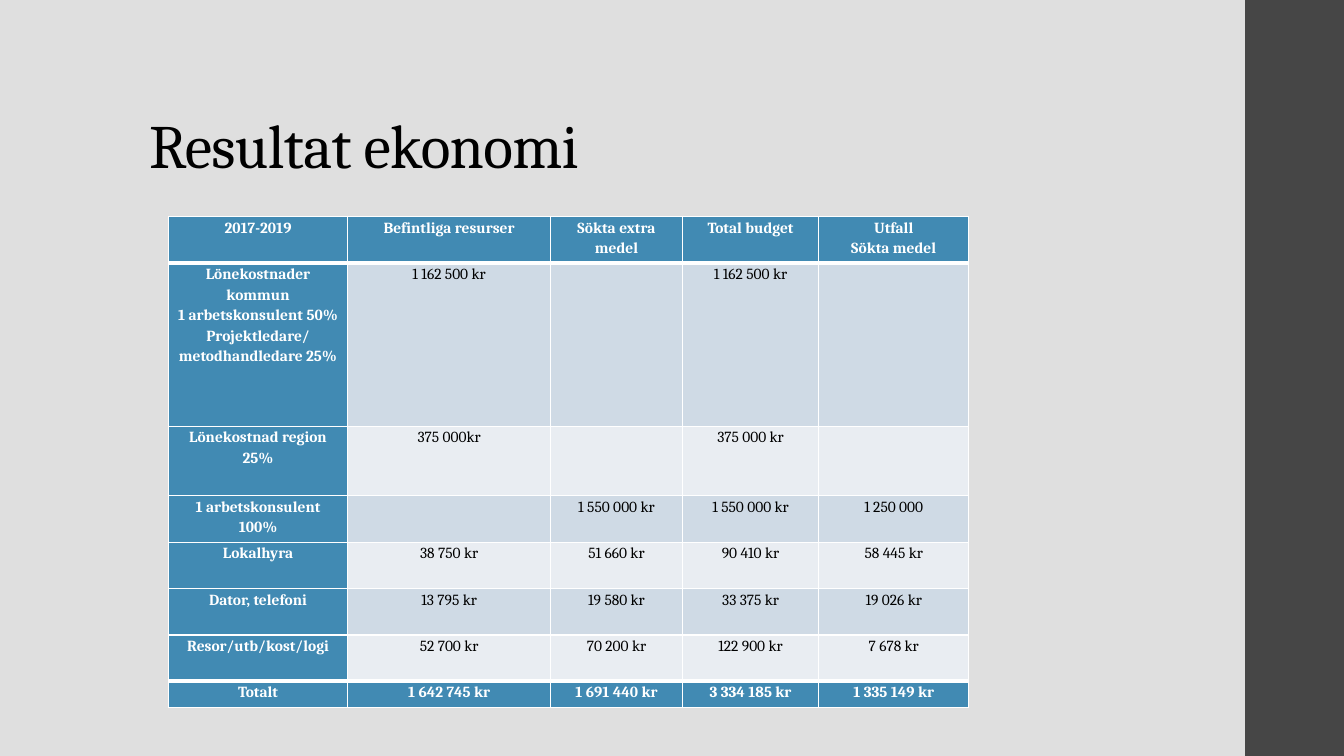
from dataclasses import dataclass

from lxml import etree
from pptx import Presentation
from pptx.dml.color import RGBColor
from pptx.enum.shapes import MSO_SHAPE
from pptx.enum.text import MSO_ANCHOR, PP_ALIGN
from pptx.oxml.ns import qn
from pptx.util import Inches, Pt

RECTANGLE = MSO_SHAPE.RECTANGLE
BOTTOM = MSO_ANCHOR.BOTTOM
CENTER = PP_ALIGN.CENTER


@dataclass(frozen=True)
class Theme:
    """Colours, font and type sizes of the slide."""

    background: str = "DFDFDF"
    side_band: str = "464646"
    accent: str = "418AB3"
    bands: tuple = ("CFDAE5", "E9EDF2")
    dark: str = "000000"
    light: str = "FFFFFF"
    font: str = "Cambria"
    title_size: int = 44
    table_size: int = 11
    thin: int = 1
    thick: int = 3


THEME = Theme()
COLUMN_WIDTHS = (1.78, 2.01, 1.31, 1.35, 1.49)
ROW_HEIGHTS = (0.46, 1.62, 0.69, 0.46, 0.46, 0.46, 0.46, 0.26)
BUDGET = (
    ("2017-2019", "Befintliga resurser", "Sökta extra medel", "Total budget", "Utfall\nSökta medel"),
    ("Lönekostnader kommun\n1 arbetskonsulent 50%\nProjektledare/\nmetodhandledare 25%",
     "1 162 500 kr", "", "1 162 500 kr", ""),
    ("Lönekostnad region 25%", "375 000kr", "", "375 000 kr", ""),
    ("1 arbetskonsulent 100%", "", "1 550 000 kr", "1 550 000 kr", "1 250 000"),
    ("Lokalhyra", "38 750 kr", "51 660 kr", "90 410 kr", "58 445 kr"),
    ("Dator, telefoni", "13 795 kr", "19 580 kr", "33 375 kr", "19 026 kr"),
    ("Resor/utb/kost/logi", "52 700 kr", "70 200 kr", "122 900 kr", "7 678 kr"),
    ("Totalt", "1 642 745 kr", "1 691 440 kr", "3 334 185 kr", "1 335 149 kr"),
)


def style_font(font, size, color, bold=False):
    """Give a font the theme typeface, a size, a colour and a weight."""
    font.name = THEME.font
    font.size = Pt(size)
    font.bold = bold
    font.color.rgb = RGBColor.from_string(color)


def add_side_band(page):
    """Draw the dark band along the right edge."""
    band = page.shapes.add_shape(RECTANGLE, Inches(12.35), 0, Inches(1), Inches(7.5))
    band.shadow.inherit = False
    band.fill.solid()
    band.fill.fore_color.rgb = RGBColor.from_string(THEME.side_band)
    band.line.fill.background()


def add_title(page, text):
    """Write the slide title, resting on the bottom of its box."""
    box = page.shapes.add_textbox(Inches(1.38), Inches(0.4), Inches(10.6), Inches(1.45))
    frame = box.text_frame
    frame.word_wrap = True
    frame.vertical_anchor = BOTTOM
    para = frame.paragraphs[0]
    para.text = text
    para.line_spacing = 0.9
    span = para.runs[0]
    style_font(span.font, THEME.title_size, THEME.dark)
    span.font._element.set("spc", "-50")


def set_borders(cell, top, bottom):
    """Draw the four cell borders, with own widths for top and bottom."""
    properties = cell._tc.get_or_add_tcPr()
    widths = {"a:lnL": THEME.thin, "a:lnR": THEME.thin, "a:lnT": top, "a:lnB": bottom}
    for tag, width in widths.items():
        line = etree.SubElement(properties, qn(tag), w=str(Pt(width)))
        fill = etree.SubElement(line, qn("a:solidFill"))
        etree.SubElement(fill, qn("a:srgbClr"), val=THEME.light)


def fill_cell(cell, text, fill, color, bold):
    """Fill a table cell and set its centred text."""
    cell.margin_left = cell.margin_right = Inches(0.07)
    cell.margin_top = cell.margin_bottom = 0
    cell.fill.solid()
    cell.fill.fore_color.rgb = RGBColor.from_string(fill)
    para = cell.text_frame.paragraphs[0]
    para.text = text
    para.alignment = CENTER
    para.line_spacing = 1.15
    style_font(para.font, THEME.table_size, color, bold)
    for span in para.runs:
        style_font(span.font, THEME.table_size, color, bold)


def add_budget_table(page):
    """Build the budget table with header, label column and total row."""
    frame = page.shapes.add_table(
        len(ROW_HEIGHTS), len(COLUMN_WIDTHS), Inches(1.67), Inches(2.15),
        Inches(sum(COLUMN_WIDTHS)), Inches(sum(ROW_HEIGHTS)))
    table = frame.table
    for column, width in zip(table.columns, COLUMN_WIDTHS):
        column.width = Inches(width)
    for row, height in zip(table.rows, ROW_HEIGHTS):
        row.height = Inches(height)
    last = len(BUDGET) - 1
    for row_index, texts in enumerate(BUDGET):
        top = THEME.thick if row_index in (1, last) else THEME.thin
        bottom = THEME.thick if row_index in (0, last - 1) else THEME.thin
        for column_index, text in enumerate(texts):
            cell = table.cell(row_index, column_index)
            strong = row_index in (0, last) or column_index == 0
            fill = THEME.accent if strong else THEME.bands[(row_index - 1) % 2]
            set_borders(cell, top, bottom)
            fill_cell(cell, text, fill, THEME.light if strong else THEME.dark, strong)


def main():
    """Build the slide and save the deck."""
    deck = Presentation()
    deck.slide_width = Inches(13.33)
    deck.slide_height = Inches(7.5)
    page = deck.slides.add_slide(deck.slide_layouts[6])
    page.background.fill.solid()
    page.background.fill.fore_color.rgb = RGBColor.from_string(THEME.background)
    add_side_band(page)
    add_title(page, "Resultat ekonomi")
    add_budget_table(page)
    deck.save("out.pptx")


if __name__ == "__main__":
    main()
